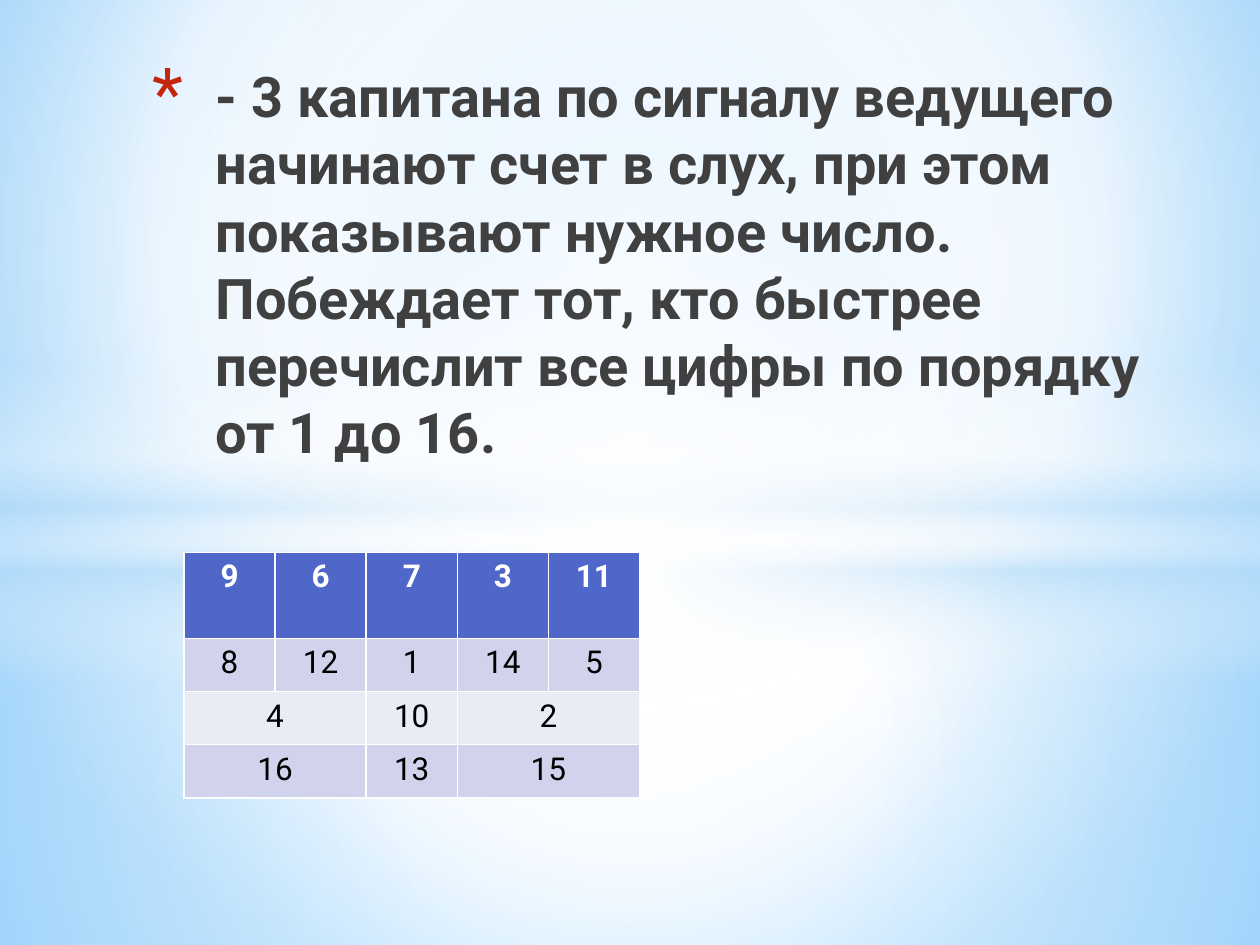
import lxml.etree
import pptx
import pptx.dml.color
import pptx.enum.shapes
import pptx.enum.text
import pptx.oxml
import pptx.oxml.ns
import pptx.util

Pt = pptx.util.Pt
SHAPES = pptx.enum.shapes.MSO_SHAPE
FONT = "Roboto"
COLORS = {
    "white": "FFFFFF", "black": "000000", "text": "404040", "bullet": "C3260C",
    "sky": "9ED5FF", "deep sky": "5BB9FF", "haze": "B4DCFA",
    "header": "4E67C8", "dark band": "D0D3EB", "light band": "E9EBF5",
}
RULES = (
    "- 3 капитана по сигналу ведущего начинают счет в слух, при этом "
    "показывают нужное число. Побеждает тот, кто быстрее перечислит "
    "все цифры по порядку от 1 до 16."
)
CENTER = (50, 50, 50, 50)
HAZES = [
    (SHAPES.RECTANGLE, (0, 304.5, 720, 235.5),
     [(0, "white", 91), (37, "white", 76), (100, "haze", 79)], CENTER),
    (SHAPES.RECTANGLE, (0, 0, 720, 304.5),
     [(0, "white", 89), (48, "white", 62), (100, "haze", 79)], CENTER),
    (SHAPES.RECTANGLE, (0, 209, 720, 180),
     [(0, "white", 0), (29, "white", 30), (45, "haze", 40),
      (55, "white", 26), (65, "haze", 60), (100, "white", 0)], None),
    (SHAPES.OVAL, (0, 126, 720, 402),
     [(0, "white", 100), (54, "white", 0)], CENTER),
]
NUMBERS = [
    [9, 6, 7, 3, 11],
    [8, 12, 1, 14, 5],
    [4, None, 10, 2, None],
    [16, None, 13, 15, None],
]
ROW_FILLS = ["header", "dark band", "light band", "dark band"]
ROW_HEIGHTS = [49.2, 30.4, 30.4, 30.4]
COLUMN_WIDTH = 52.1


def rgb(name):
    return pptx.dml.color.RGBColor.from_string(COLORS[name])


def apply_format(target, values):
    for name, value in values.items():
        setattr(target, name, value)


def format_font(font, color, size, bold):
    apply_format(font, {"name": FONT, "size": Pt(size), "bold": bold})
    font.color.rgb = rgb(color)


def set_gradient(parent, stops, focus):
    stop_xml = "".join(
        f'<a:gs pos="{position * 1000}"><a:srgbClr val="{COLORS[color]}">'
        f'<a:alpha val="{alpha * 1000}"/></a:srgbClr></a:gs>'
        for position, color, alpha in stops
    )
    direction = '<a:lin ang="5400000" scaled="0"/>'
    if focus:
        sides = " ".join(
            f'{side}="{value * 1000}"' for side, value in zip("ltrb", focus)
        )
        direction = f'<a:path path="circle"><a:fillToRect {sides}/></a:path>'
    gradient = pptx.oxml.parse_xml(
        f'<a:gradFill {pptx.oxml.ns.nsdecls("a")} rotWithShape="1">'
        f"<a:gsLst>{stop_xml}</a:gsLst>{direction}</a:gradFill>"
    )
    solid = parent.find(pptx.oxml.ns.qn("a:solidFill"))
    parent.replace(solid, gradient)


def paint_background(slide):
    slide.background.fill.solid()
    properties = slide.element.find(".//" + pptx.oxml.ns.qn("p:bgPr"))
    stops = [(0, "sky", 100), (60, "white", 100), (100, "deep sky", 100)]
    set_gradient(properties, stops, (20, 10, 20, 60))


def add_haze(slide, kind, box, stops, focus):
    shape = slide.shapes.add_shape(kind, *map(Pt, box))
    shape.shadow.inherit = False
    shape.line.fill.background()
    shape.fill.solid()
    set_gradient(shape.element.spPr, stops, focus)


def set_bullet(paragraph, character, color, percent, margin, indent):
    properties = paragraph._p.get_or_add_pPr()
    properties.set("marL", str(Pt(margin)))
    properties.set("indent", str(Pt(indent)))
    bullet_color = lxml.etree.SubElement(properties, pptx.oxml.ns.qn("a:buClr"))
    lxml.etree.SubElement(
        bullet_color, pptx.oxml.ns.qn("a:srgbClr"), val=COLORS[color]
    )
    for tag, attribute, value in [
        ("a:buSzPct", "val", str(percent * 1000)),
        ("a:buFont", "typeface", FONT),
        ("a:buChar", "char", character),
    ]:
        lxml.etree.SubElement(
            properties, pptx.oxml.ns.qn(tag), {attribute: value}
        )


def fill_title(slide):
    title = slide.shapes.title
    apply_format(title, {
        "left": Pt(65.5), "top": Pt(31.7), "width": Pt(612), "height": Pt(532.8),
    })
    slide.shapes._spTree.append(title.element)
    frame = title.text_frame
    frame.text = RULES
    apply_format(frame, {
        "word_wrap": True,
        "auto_size": pptx.enum.text.MSO_AUTO_SIZE.NONE,
        "vertical_anchor": pptx.enum.text.MSO_ANCHOR.TOP,
    })
    paragraph = frame.paragraphs[0]
    paragraph.alignment = pptx.enum.text.PP_ALIGN.LEFT
    set_bullet(paragraph, "*", "bullet", 128, 50.4, -36)
    format_font(paragraph.runs[0].font, "text", 32, True)


def fill_cell(cell, number, fill, is_header):
    cell.fill.solid()
    cell.fill.fore_color.rgb = rgb(fill)
    if number is None:
        return
    paragraph = cell.text_frame.paragraphs[0]
    paragraph.alignment = pptx.enum.text.PP_ALIGN.CENTER
    run = paragraph.add_run()
    run.text = str(number)
    format_font(run.font, "white" if is_header else "black", 18, is_header)


def add_number_table(slide):
    column_count = len(NUMBERS[0])
    table = slide.shapes.add_table(
        len(NUMBERS), column_count, Pt(105.1), Pt(315.6),
        Pt(COLUMN_WIDTH * column_count), Pt(sum(ROW_HEIGHTS)),
    ).table
    for column in table.columns:
        column.width = Pt(COLUMN_WIDTH)
    for row_index, numbers in enumerate(NUMBERS):
        table.rows[row_index].height = Pt(ROW_HEIGHTS[row_index])
        for column_index, number in enumerate(numbers):
            cell = table.cell(row_index, column_index)
            fill_cell(cell, number, ROW_FILLS[row_index], row_index == 0)
            if number is None:
                table.cell(row_index, column_index - 1).merge(cell)


def main():
    presentation = pptx.Presentation()
    apply_format(presentation, {"slide_width": Pt(720), "slide_height": Pt(540)})
    slide = presentation.slides.add_slide(presentation.slide_layouts[5])
    paint_background(slide)
    for haze in HAZES:
        add_haze(slide, *haze)
    fill_title(slide)
    add_number_table(slide)
    presentation.save("out.pptx")


if __name__ == "__main__":
    main()
